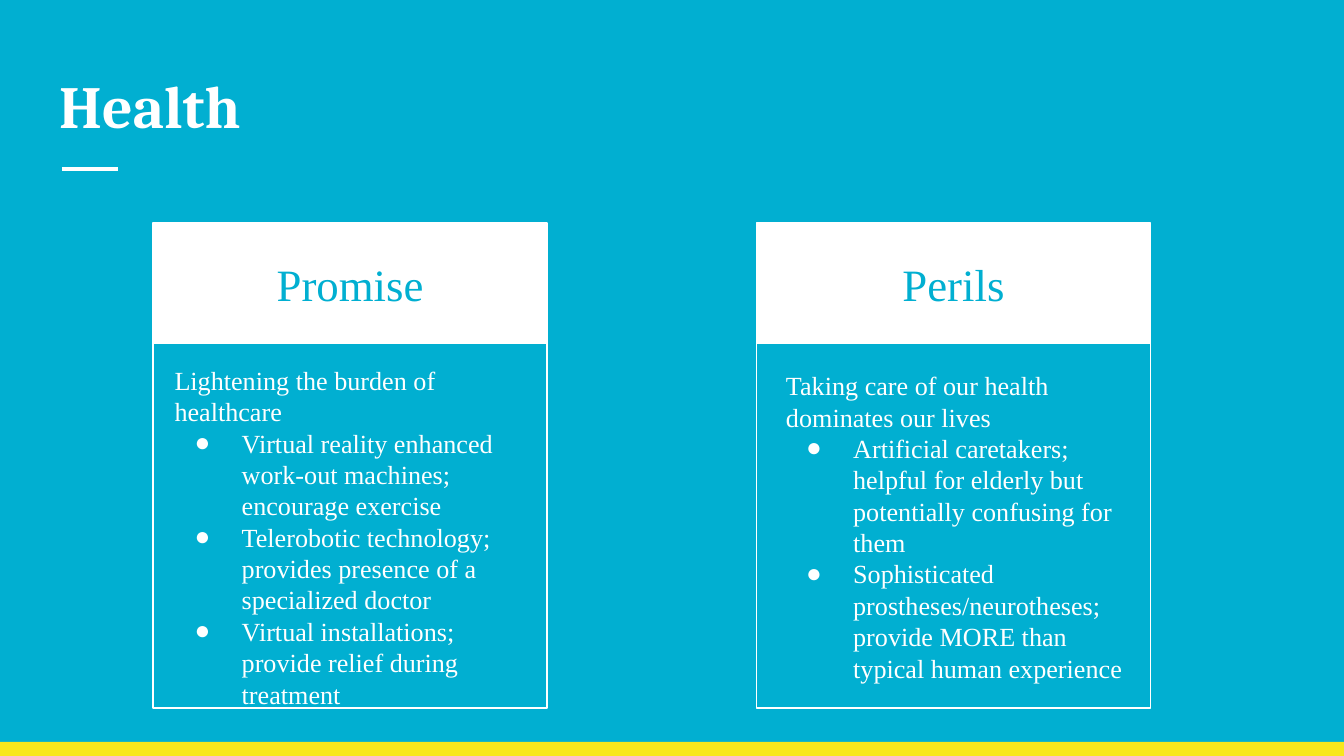
"""Build a slide on the promise and perils of technology in health."""
import pptx
import pptx.dml.color
import pptx.enum.shapes
import pptx.enum.text
import pptx.oxml
import pptx.oxml.ns
import pptx.util
from pptx.util import Inches

BLUE, WHITE, YELLOW = "01AFD1", "FFFFFF", "F8E71C"
BODY_FONT = "Times New Roman"
RECTANGLE = pptx.enum.shapes.MSO_SHAPE.RECTANGLE
CARD_TOP, CARD_WIDTH, CARD_HEIGHT, HEADER_HEIGHT = 1.66, 2.93, 3.61, 0.9
NAMESPACE = pptx.oxml.ns.nsdecls("a")


def color(value):
    return pptx.dml.color.RGBColor.from_string(value)


def add_text(para, text, font, size, text_color, bold=False):
    span = para.add_run()
    span.text = text
    span.font.name = font
    span.font.size = pptx.util.Pt(size)
    span.font.bold = bold
    span.font.color.rgb = color(text_color)


deck = pptx.Presentation()
deck.slide_width = Inches(10)
deck.slide_height = deck.slide_width * 9 // 16
page = deck.slides.add_slide(deck.slide_layouts[5])
page.background.fill.solid()
page.background.fill.fore_color.rgb = color(BLUE)

footer_top = Inches(5.52)
footer = page.shapes.add_shape(RECTANGLE, 0, footer_top, deck.slide_width, deck.slide_height - footer_top)
footer.shadow.inherit = False
footer.fill.solid()
footer.fill.fore_color.rgb = color(YELLOW)
footer.line.fill.background()

rule = page.shapes.add_connector(
    pptx.enum.shapes.MSO_CONNECTOR.STRAIGHT, Inches(0.46), Inches(1.26), Inches(0.88), Inches(1.26)
)
rule.line.color.rgb = color(WHITE)
rule.line.width = pptx.util.Pt(2.25)
rule.element.spPr.append(pptx.oxml.parse_xml(f"<a:effectLst {NAMESPACE}/>"))

title = page.shapes.title
title.left, title.top, title.width, title.height = Inches(0.34), Inches(0.41), Inches(9.32), Inches(0.71)
title_para = title.text_frame.paragraphs[0]
title_para.alignment = pptx.enum.text.PP_ALIGN.LEFT
title.text_frame.vertical_anchor = pptx.enum.text.MSO_ANCHOR.TOP
add_text(title_para, "Health", "Cambria", 32, WHITE, True)

cards = [
    ("Promise", 1.14, (1.2, 2.61, 2.79, 2.58), "Lightening the burden of healthcare", [
        "Virtual reality enhanced work-out machines; encourage exercise",
        "Telerobotic technology; provides presence of a specialized doctor",
        "Virtual installations; provide relief during treatment",
    ]),
    ("Perils", 5.63, (5.75, 2.65, 2.74, 2.5), "Taking care of our health dominates our lives", [
        "Artificial caretakers; helpful for elderly but potentially confusing for them",
        "Sophisticated prostheses/neurotheses; provide MORE than typical human experience",
    ]),
]
frames = [title.text_frame]
for heading, left, body_place, lead, points in cards:
    card = page.shapes.add_group_shape()
    outline, header = [
        card.shapes.add_shape(RECTANGLE, Inches(left), Inches(CARD_TOP), Inches(CARD_WIDTH), Inches(height))
        for height in (CARD_HEIGHT, HEADER_HEIGHT)
    ]
    outline.shadow.inherit = False
    outline.fill.background()
    outline.line.color.rgb = color(WHITE)
    outline.line.width = pptx.util.Pt(0.75)

    header.shadow.inherit = False
    header.fill.solid()
    header.fill.fore_color.rgb = color(WHITE)
    header.line.fill.background()
    header.text_frame.vertical_anchor = pptx.enum.text.MSO_ANCHOR.MIDDLE
    heading_para = header.text_frame.paragraphs[0]
    heading_para.alignment = pptx.enum.text.PP_ALIGN.CENTER
    add_text(heading_para, heading, BODY_FONT, 24, BLUE)

    body = page.shapes.add_textbox(*[Inches(length) for length in body_place])
    frames += [header.text_frame, body.text_frame]
    for index, text in enumerate([lead] + points):
        para = body.text_frame.paragraphs[0] if index == 0 else body.text_frame.add_paragraph()
        add_text(para, text, BODY_FONT, 14, WHITE)
        if index > 0:
            properties = para._p.get_or_add_pPr()
            properties.set("marL", str(Inches(0.5)))
            properties.set("indent", str(Inches(-0.35)))
            for markup in (
                f'<a:buClr {NAMESPACE}><a:srgbClr val="{WHITE}"/></a:buClr>',
                f'<a:buFont {NAMESPACE} typeface="{BODY_FONT}"/>',
                f'<a:buChar {NAMESPACE} char="●"/>',
            ):
                properties.append(pptx.oxml.parse_xml(markup))

for frame in frames:
    frame.word_wrap = True
    frame.auto_size = pptx.enum.text.MSO_AUTO_SIZE.NONE
    frame.margin_left = frame.margin_right = Inches(0.1)
    frame.margin_top = frame.margin_bottom = Inches(0.1)

deck.save("out.pptx")
